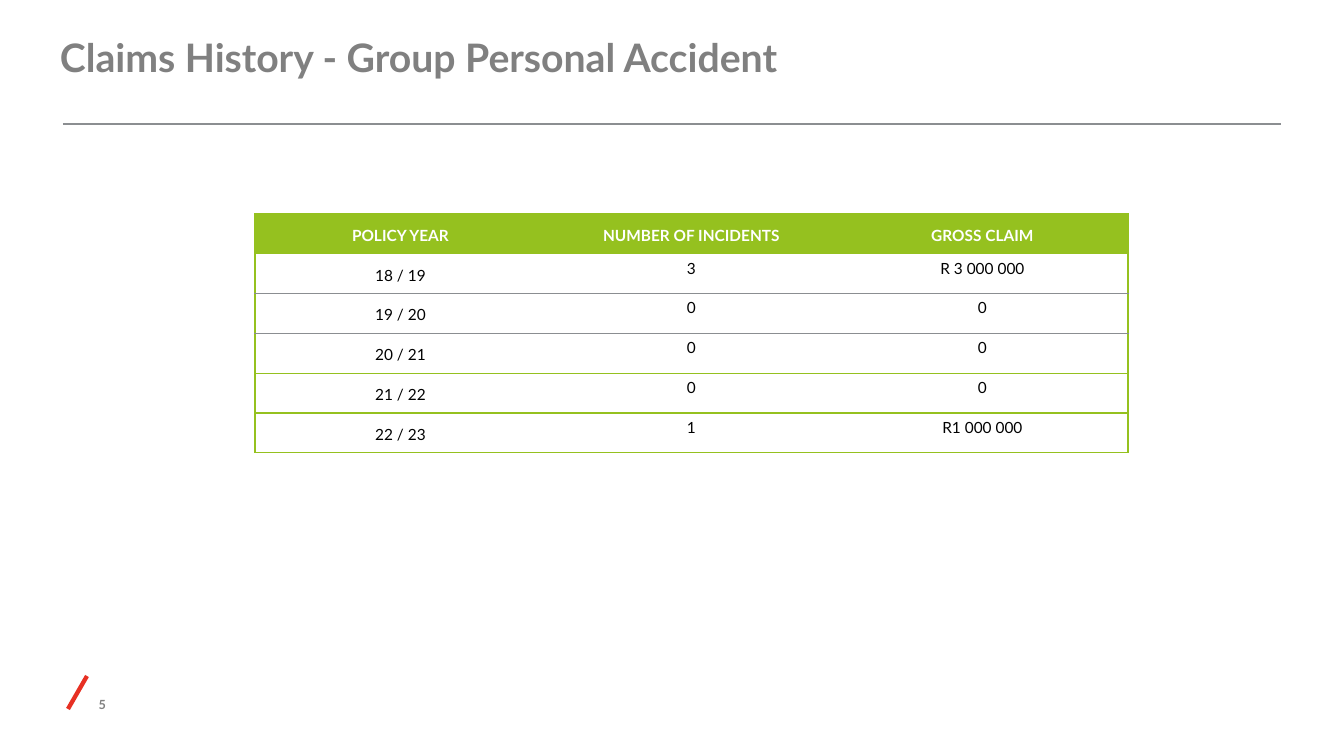
from lxml import etree
from pptx import Presentation
from pptx.dml.color import RGBColor
from pptx.enum.shapes import MSO_CONNECTOR
from pptx.enum.text import MSO_ANCHOR, PP_ALIGN
from pptx.oxml.ns import qn
from pptx.util import Pt

# Content
TITLE = "Claims History - Group Personal Accident"
PAGE_NUMBER = "5"
CLAIMS = [
    ("POLICY YEAR", "NUMBER OF INCIDENTS", "GROSS CLAIM"),
    ("18 / 19", "3", "R 3 000 000"),
    ("19 / 20", "0", "0"),
    ("20 / 21", "0", "0"),
    ("21 / 22", "0", "0"),
    ("22 / 23", "1", "R1 000 000"),
]
GREY_RULED_ROWS = (1, 2)

# Look
FONT = "Lato"
GREY = RGBColor(0x80, 0x80, 0x80)
RULE_GREY = RGBColor(0x8B, 0x8E, 0x91)
RED = RGBColor(0xE7, 0x30, 0x23)
GREEN = RGBColor(0x95, 0xC1, 0x1F)
WHITE = RGBColor(0xFF, 0xFF, 0xFF)
BLACK = RGBColor(0, 0, 0)
NO_GRID_STYLE = "{2D5ABB26-0587-4C30-8999-92F81FD0307C}"

# Geometry in px
SLIDE_W, SLIDE_H = 1344, 756
TABLE_X, TABLE_Y, TABLE_W, TABLE_H = 255, 214, 873, 239


def px(n):
    return round(n * 914400 / 100.8)


def style(p, size, color, bold, align):
    p.alignment = align
    p.font.name = FONT
    p.font.size = Pt(size)
    p.font.bold = bold
    p.font.color.rgb = color


def add_text(s, text, box, size, align, anchor, bottom=0):
    tf = s.shapes.add_textbox(*map(px, box)).text_frame
    tf.word_wrap = True
    tf.vertical_anchor = anchor
    tf.margin_left = tf.margin_top = tf.margin_right = 0
    tf.margin_bottom = px(bottom)
    p = tf.paragraphs[0]
    p.text = text
    style(p, size, GREY, True, align)


def add_line(s, ends, color, width):
    line = s.shapes.add_connector(MSO_CONNECTOR.STRAIGHT, *map(px, ends))
    line.line.color.rgb = color
    line.line.width = Pt(width)
    etree.SubElement(line._element.spPr, qn("a:effectLst"))


def set_borders(cell, colors):
    """Border colours run left, right, top, bottom; None means no line."""
    tcPr = cell._tc.get_or_add_tcPr()
    for i, (side, color) in enumerate(zip("LRTB", colors)):
        ln = etree.Element(qn(f"a:ln{side}"), w=str(Pt(1)))
        if color is None:
            etree.SubElement(ln, qn("a:noFill"))
        else:
            fill = etree.SubElement(ln, qn("a:solidFill"))
            etree.SubElement(fill, qn("a:srgbClr"), val=str(color))
        tcPr.insert(i, ln)


def rule_below(row):
    return RULE_GREY if row in GREY_RULED_ROWS else GREEN


def add_claims_table(s):
    rows, cols = len(CLAIMS), len(CLAIMS[0])
    box = map(px, (TABLE_X, TABLE_Y, TABLE_W, TABLE_H))
    table = s.shapes.add_table(rows, cols, *box).table
    table._tbl.tblPr.find(qn("a:tableStyleId")).text = NO_GRID_STYLE
    for column in table.columns:
        column.width = px(TABLE_W / cols)
    for r, values in enumerate(CLAIMS):
        table.rows[r].height = px(TABLE_H / rows)
        header = r == 0
        for c, value in enumerate(values):
            cell = table.cell(r, c)
            cell.fill.solid()
            cell.fill.fore_color.rgb = GREEN if header else WHITE
            p = cell.text_frame.paragraphs[0]
            p.text = value
            style(p, 11, WHITE if header else BLACK, header, PP_ALIGN.CENTER)
            if header or c == 0:
                cell.vertical_anchor = MSO_ANCHOR.MIDDLE
                cell.margin_left = cell.margin_right = px(7)
                cell.margin_top = cell.margin_bottom = 0
                p.line_spacing = 1.15
                p.space_after = Pt(10)
            set_borders(cell, (GREEN if c == 0 else None,
                               GREEN if c == cols - 1 else None,
                               rule_below(r - 1), rule_below(r)))


def main():
    prs = Presentation()
    prs.slide_width, prs.slide_height = px(SLIDE_W), px(SLIDE_H)
    s = prs.slides.add_slide(prs.slide_layouts[6])

    # Footer and rules
    add_text(s, PAGE_NUMBER, (49, 694, 57, 23), 9, PP_ALIGN.RIGHT,
             MSO_ANCHOR.BOTTOM, bottom=5)
    add_line(s, (63, 124, 1281, 124), RULE_GREY, 1.65)
    add_line(s, (68, 709, 87, 676), RED, 3.05)

    # Title and table
    add_text(s, TITLE, (60, 17, 1110, 80), 28, PP_ALIGN.LEFT, MSO_ANCHOR.MIDDLE)
    add_claims_table(s)
    prs.save("out.pptx")


if __name__ == "__main__":
    main()
